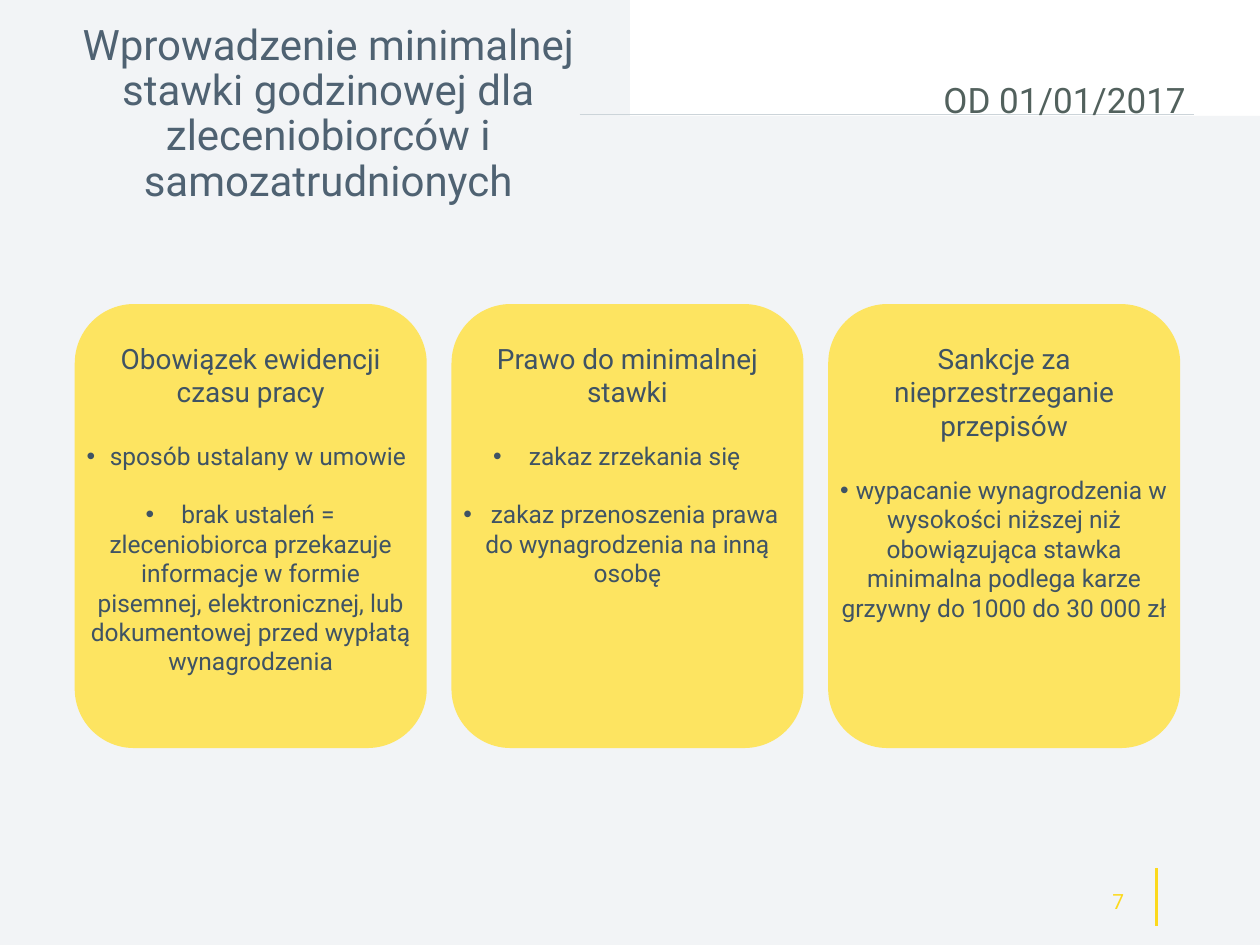
import pptx
import pptx.dml.color
import pptx.enum.shapes
import pptx.enum.text
import pptx.oxml.ns
import pptx.util
from lxml import etree
from pptx.util import Inches

COLORS = {
    "white": "FFFFFF",
    "panel": "F2F4F6",
    "accent": "FCD91D",
    "rule": "CCD4D9",
    "card": "FDE461",
    "title": "4F6272",
    "date": "52615D",
    "body": "3F5364",
}
FONT = "Roboto"
ALIGN = pptx.enum.text.PP_ALIGN
ANCHOR = pptx.enum.text.MSO_ANCHOR
SHAPES = pptx.enum.shapes.MSO_SHAPE
qn = pptx.oxml.ns.qn


def rgb(name):
    return pptx.dml.color.RGBColor.from_string(COLORS[name])


def format_paragraph(paragraph, text, size, color, align):
    paragraph.text = text
    paragraph.alignment = align
    for run in paragraph.runs:
        run.font.name = FONT
        run.font.size = pptx.util.Pt(size)
        run.font.color.rgb = rgb(color)


presentation = pptx.Presentation()
presentation.slide_width = Inches(10)
presentation.slide_height = Inches(7.5)
slide = presentation.slides.add_slide(presentation.slide_layouts[6])
slide.background.fill.solid()
slide.background.fill.fore_color.rgb = rgb("white")

# Background panels
for left, top, width, height in [(0, 0.92, 10, 6.58), (0, 0, 5, 7.5)]:
    panel = slide.shapes.add_shape(
        SHAPES.RECTANGLE, Inches(left), Inches(top), Inches(width), Inches(height))
    panel.shadow.inherit = False
    panel.fill.solid()
    panel.fill.fore_color.rgb = rgb("panel")
    panel.line.fill.background()

# Header rule and page number bar
for x1, y1, x2, y2, color, weight in [
    (4.6, 0.91, 9.48, 0.91, "rule", 0.75),
    (9.18, 6.89, 9.18, 7.35, "accent", 1.5),
]:
    line = slide.shapes.add_connector(
        pptx.enum.shapes.MSO_CONNECTOR.STRAIGHT,
        Inches(x1), Inches(y1), Inches(x2), Inches(y2))
    line.line.color.rgb = rgb(color)
    line.line.width = pptx.util.Pt(weight)
    etree.SubElement(line._element.spPr, qn("a:effectLst"))

# Title, page number and date
for text, left, top, width, height, size, color, align, anchor, spacing in [
    ("Wprowadzenie minimalnej stawki godzinowej dla zleceniobiorców i samozatrudnionych",
     0.33, 0.38, 4.55, 1.06, 24, "title", ALIGN.CENTER, ANCHOR.MIDDLE, 0.9),
    ("7", 7.06, 6.95, 1.96, 0.4, 12, "accent", ALIGN.RIGHT, ANCHOR.MIDDLE, 1.0),
    ("OD 01/01/2017", 5.94, 0.61, 3.57, 0.26, 20, "date", ALIGN.RIGHT, ANCHOR.TOP, 0.9),
]:
    box = slide.shapes.add_textbox(Inches(left), Inches(top), Inches(width), Inches(height))
    box.text_frame.word_wrap = True
    box.text_frame.vertical_anchor = anchor
    paragraph = box.text_frame.paragraphs[0]
    format_paragraph(paragraph, text, size, color, align)
    paragraph.line_spacing = spacing

# Three cards, each a heading with bullets
cards = [
    ("Obowiązek ewidencji czasu pracy", 2.79, [
        " sposób ustalany w umowie",
        " brak ustaleń = zleceniobiorca przekazuje informacje w formie pisemnej, "
        "elektronicznej, lub dokumentowej przed wypłatą wynagrodzenia"]),
    ("Prawo do minimalnej stawki", 2.09, [
        " zakaz zrzekania się",
        " zakaz przenoszenia prawa do wynagrodzenia na inną osobę"]),
    ("Sankcje za nieprzestrzeganie przepisów", 2.36, [
        " wypacanie wynagrodzenia w wysokości niższej niż obowiązująca stawka "
        "minimalna podlega karze grzywny do 1000 do 30 000 zł"]),
]
card_left, card_pitch = 0.6, 2.99
cards_group = slide.shapes.add_group_shape()
for index, (heading, text_height, bullets) in enumerate(cards):
    left = card_left + index * card_pitch
    card = cards_group.shapes.add_shape(
        SHAPES.ROUNDED_RECTANGLE, Inches(left), Inches(2.42), Inches(2.78), Inches(3.51))
    card.shadow.inherit = False
    card.fill.solid()
    card.fill.fore_color.rgb = rgb("card")
    card.line.color.rgb = rgb("card")
    card.line.width = pptx.util.Pt(1)

    box = cards_group.shapes.add_textbox(
        Inches(left - 0.01), Inches(2.66), Inches(2.8), Inches(text_height))
    frame = box.text_frame
    frame.word_wrap = True
    frame.auto_size = pptx.enum.text.MSO_AUTO_SIZE.SHAPE_TO_FIT_TEXT
    format_paragraph(frame.paragraphs[0], heading, 16, "body", ALIGN.CENTER)
    for number, bullet in enumerate(bullets):
        paragraph = frame.add_paragraph()
        properties = paragraph._p.get_or_add_pPr()
        etree.SubElement(properties, qn("a:buFont"), typeface="Arial")
        etree.SubElement(properties, qn("a:buChar"), char="•")
        format_paragraph(paragraph, bullet, 14, "body", ALIGN.CENTER)
        # One line of the preceding text size separates the entries
        paragraph.space_before = pptx.util.Pt(16.4 if number else 18.75)

presentation.save("out.pptx")
